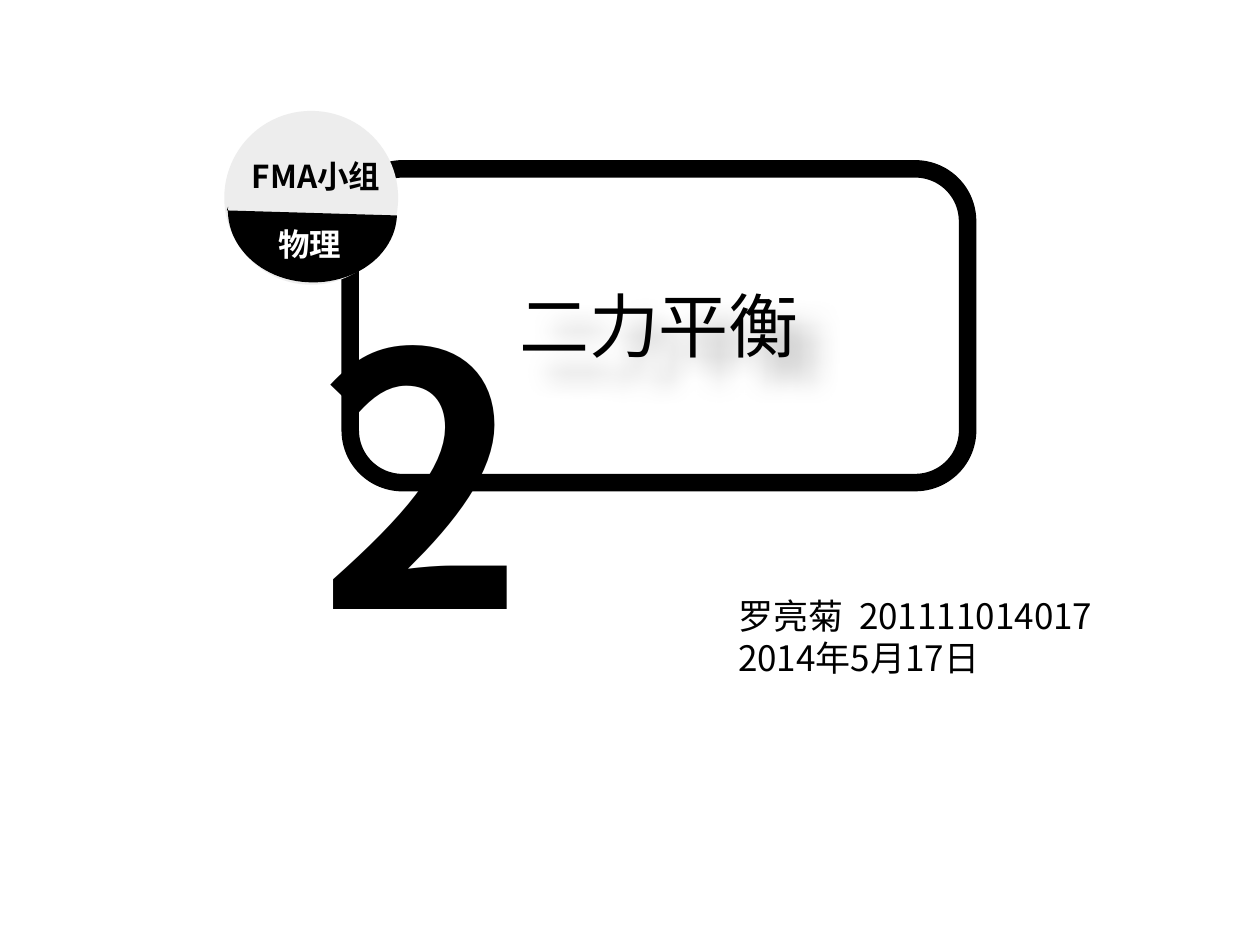
from lxml import etree
from pptx import Presentation
from pptx import util as u
from pptx.dml.color import RGBColor
from pptx.enum import shapes, text
from pptx.oxml.ns import qn

COLORS = {"ink": "000000", "paper": "FFFFFF", "badge": "EDEDED"}
BOLD_FONT, PLAIN_FONT = "Noto Sans CJK JP", "Noto Sans CJK SC"

# Content: lines, box (left, top, width, height), size, font, bold, colour
TITLE = (["二力平衡"], (4.02, 2.19, 2.63, 0.77), 40, PLAIN_FONT, False, "ink")
LABELS = [
    (["FMA小组"], (1.9, 1.2, 1.28, 0.71), 18, BOLD_FONT, True, "ink"),
    (["物理"], (2.11, 1.74, 1.32, 0.4), 18, BOLD_FONT, True, "paper"),
    (["2"], (2.43, 2.01, 2.1, 3.47), 200, BOLD_FONT, True, "ink"),
]
AUTHOR = (["罗亮菊  201111014017", "2014年5月17日"],
          (5.76, 4.67, 3.6, 0.77), 20, PLAIN_FONT, False, "ink")

FRAME = (2.78, 1.34, 4.9, 2.49)
BADGE = (1.78, 0.88, 1.38, 1.38)
# Lower part of the badge: two Bezier arcs, then its slanted top edge
BADGE_ARCS = [
    [(3.15, 1.72), (3.13, 2.03), (2.81, 2.26), (2.44, 2.24)],
    [(2.44, 2.24), (2.07, 2.22), (1.79, 1.95), (1.81, 1.64)],
]
BADGE_EDGE = [(1.8, 1.67), (3.15, 1.71)]
ARC_STEPS = 24


def rgb(name):
    return RGBColor.from_string(COLORS[name])


def bezier_point(controls, t):
    weights = ((1 - t) ** 3, 3 * t * (1 - t) ** 2, 3 * t * t * (1 - t), t ** 3)
    return tuple(sum(w * c[axis] for w, c in zip(weights, controls))
                 for axis in (0, 1))


def write_text(box, lines, place, size, font, bold, color):
    box.left, box.top, box.width, box.height = map(u.Inches, place)
    frame = box.text_frame
    frame.text = "\n".join(lines)
    frame.word_wrap = True
    frame.auto_size = text.MSO_AUTO_SIZE.NONE
    frame.vertical_anchor = text.MSO_ANCHOR.TOP
    for para in frame.paragraphs:
        para.alignment = text.PP_ALIGN.LEFT
        for span in para.runs:
            span.font.size, span.font.bold = u.Pt(size), bold
            span.font.name = font
            span.font.color.rgb = rgb(color)
            east_asian = etree.SubElement(span.font._element, qn("a:ea"))
            east_asian.set("typeface", font)


def add_soft_shadow(box):
    effects = etree.SubElement(box._element.spPr, qn("a:effectLst"))
    shadow = etree.SubElement(effects, qn("a:outerShdw"), blurRad=str(u.Inches(0.2)),
                              dist=str(u.Inches(0.28)), dir="2700000", algn="tl")
    tint = etree.SubElement(shadow, qn("a:srgbClr"), val=COLORS["ink"])
    etree.SubElement(tint, qn("a:alpha"), val="30000")


def paint(shape, color):
    shape.shadow.inherit = False
    shape.fill.solid()
    shape.fill.fore_color.rgb = rgb(color)
    shape.line.fill.background()


def main():
    deck = Presentation()
    deck.slide_width, deck.slide_height = u.Inches(10), u.Inches(7.5)
    page = deck.slides.add_slide(deck.slide_layouts[5])

    # Rounded frame around the title
    frame = page.shapes.add_shape(shapes.MSO_SHAPE.ROUNDED_RECTANGLE,
                                  *map(u.Inches, FRAME))
    frame.shadow.inherit = False
    frame.fill.background()
    frame.line.color.rgb = rgb("ink")
    frame.line.width = u.Pt(10)

    # Two-tone badge
    disc = page.shapes.add_shape(shapes.MSO_SHAPE.FLOWCHART_CONNECTOR,
                                 *map(u.Inches, BADGE))
    paint(disc, "badge")
    outline = [bezier_point(arc, step / ARC_STEPS)
               for arc in BADGE_ARCS for step in range(ARC_STEPS + 1)] + BADGE_EDGE
    points = [(u.Inches(x), u.Inches(y)) for x, y in outline]
    builder = page.shapes.build_freeform(*points[0])
    builder.add_line_segments(points[1:], close=True)
    paint(builder.convert_to_shape(), "ink")

    # Title and labels
    write_text(page.shapes.title, *TITLE)
    add_soft_shadow(page.shapes.title)
    for label in LABELS + [AUTHOR]:
        box = page.shapes.add_textbox(*map(u.Inches, label[1]))
        write_text(box, *label)

    deck.save("out.pptx")


if __name__ == "__main__":
    main()
